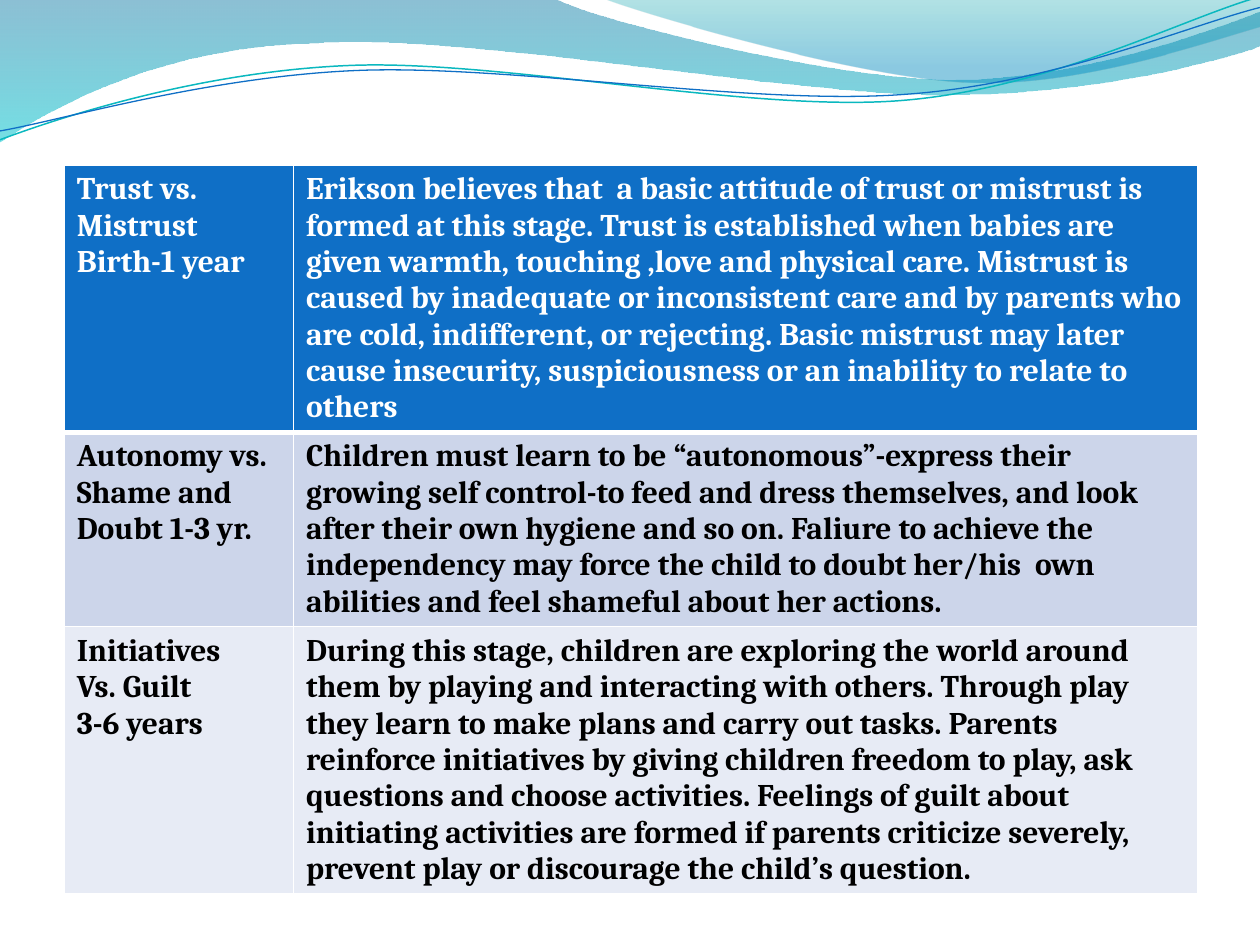
from dataclasses import dataclass
from math import cos, radians, sin

from lxml.etree import SubElement
from pptx import Presentation
from pptx.dml.color import RGBColor
from pptx.oxml.ns import qn
from pptx.util import Inches, Pt


@dataclass(frozen=True)
class Theme:
    font: str = "Cambria"
    body_size: int = 18
    white: str = "FFFFFF"
    black: str = "000000"
    blue: str = "0F6FC6"
    teal: str = "0AB8BF"
    band_dark: str = "CCD5EA"
    band_light: str = "E7EBF5"
    # Gradient stops: colour, opacity in percent
    wide_wave: tuple = (("0074A1", 45), ("00C6CF", 55))
    right_wave: tuple = (("00A1A9", 30), ("008BBF", 45))


THEME = Theme()
LINE_TILT = -2.7

# Outlines in inches: a pair is a straight step, six numbers are a Bezier curve
WIDE_WAVE = [
    (0, 0), (4.4, -0.01), (4.76, 0.17, 6.64, 0.63, 7.58, 0.63),
    (8.53, 0.63, 9.58, 0.26, 10, 0.09), (10.01, 0.36),
    (9.83, 0.44, 8.7, 0.76, 7.46, 0.75), (6.22, 0.75, 3.82, 0.28, 2.57, 0.34),
    (1.29, 0.36, 0.46, 0.83, -0.01, 1.13)]
RIGHT_WAVE = [
    (4.79, -0.01), (5.09, 0.11, 6.82, 0.62, 7.69, 0.65),
    (8.56, 0.69, 9.61, 0.32, 10, 0.21), (10, 0)]
TEAL_LINE = [
    (0, 1.11), (0.48, 0.93, 1.58, 0.57, 2.77, 0.52),
    (3.95, 0.47, 5.93, 0.89, 7.13, 0.8), (8.33, 0.71, 9.38, 0.15, 9.98, -0.02)]
BLUE_LINE = [
    (0, 1.04), (0.47, 0.96, 1.64, 0.61, 2.83, 0.56),
    (4.03, 0.51, 5.97, 0.84, 7.17, 0.75), (8.36, 0.67, 9.41, 0.21, 10, 0.06)]

STAGES = [
    (["Trust vs.", "Mistrust Birth-1 year"],
     ["Erikson believes that  a basic attitude of trust or mistrust is formed at "
      "this stage. Trust is established when babies are given warmth, touching "
      ",love and physical care. Mistrust is caused by inadequate or inconsistent "
      "care and by parents who are cold, indifferent, or rejecting. Basic mistrust "
      "may later cause insecurity, suspiciousness or an inability to relate to "
      "others"]),
    (["Autonomy vs. Shame and Doubt 1-3 yr."],
     ["Children must learn to be “autonomous”-express their growing self "
      "control-to feed and dress themselves, and look after their own hygiene and "
      "so on. Faliure to achieve the independency may force the child to doubt "
      "her/his  own abilities and feel shameful about her actions."]),
    (["Initiatives", "Vs. Guilt", "3-6 years"],
     ["During this stage, children are exploring the world around them by playing "
      "and interacting with others. Through play they learn to make plans and "
      "carry out tasks. Parents reinforce initiatives by giving children freedom "
      "to play, ask questions and choose activities. Feelings of guilt about "
      "initiating activities are formed if parents criticize severely, prevent "
      "play or discourage the child’s question."]),
]


def rgb(code):
    return RGBColor.from_string(code)


def add_outline(shapes, left, top, outline, closed, tilt=0):
    """Draw an outline whose curves stay true Bezier curves."""
    xs, ys = [step[-2] for step in outline], [step[-1] for step in outline]
    mid_x, mid_y = (min(xs) + max(xs)) / 2, (min(ys) + max(ys)) / 2
    turn = radians(-tilt)

    def place(x, y):
        dx, dy = x - mid_x, y - mid_y
        return (left + Inches(mid_x + dx * cos(turn) - dy * sin(turn)),
                top + Inches(mid_y + dx * sin(turn) + dy * cos(turn)))

    steps = [[place(*step[i:i + 2]) for i in range(0, len(step), 2)] for step in outline]
    anchors = [step[-1] for step in steps]
    builder = shapes.build_freeform(*anchors[0])
    builder.add_line_segments(anchors[1:], close=closed)
    shape = builder.convert_to_shape()
    shape.shadow.inherit = False

    # Put the two control points in front of the end point of each curve
    origin_x, origin_y = min(x for x, _ in anchors), min(y for _, y in anchors)
    segments = list(shape.element.spPr.iter(qn("a:lnTo")))
    for segment, step in zip(segments, steps[1:]):
        if len(step) == 3:
            segment.tag = qn("a:cubicBezTo")
            for i, (x, y) in enumerate(step[:2]):
                control = SubElement(segment, qn("a:pt"),
                                     x=str(x - origin_x), y=str(y - origin_y))
                segment.insert(i, control)
    shape.rotation = tilt
    return shape


def add_wave(shapes, left, top, outline, stops, end=1.0):
    wave = add_outline(shapes, left, top, outline, closed=True)
    wave.line.fill.background()
    wave.fill.gradient()
    wave.fill.gradient_angle = 270
    for stop, position, (color, _) in zip(wave.fill.gradient_stops, (0, end), stops):
        stop.position = position
        stop.color.rgb = rgb(color)
    for tint, (_, opacity) in zip(wave.element.spPr.iter(qn("a:srgbClr")), stops):
        SubElement(tint, qn("a:alpha"), val=str(opacity * 1000))


def add_wave_line(shapes, left, top, outline, color, weight):
    curve = add_outline(shapes, left, top, outline, closed=False, tilt=LINE_TILT)
    curve.fill.background()
    curve.line.color.rgb = rgb(color)
    curve.line.width = Pt(weight)


def add_header(slide, left, top):
    add_wave(slide.shapes, left, top, WIDE_WAVE, THEME.wide_wave)
    add_wave(slide.shapes, left, top, RIGHT_WAVE, THEME.right_wave, end=0.8)
    wave_lines = slide.shapes.add_group_shape().shapes
    add_wave_line(wave_lines, left, top, TEAL_LINE, THEME.teal, 0.85)
    add_wave_line(wave_lines, left, top, BLUE_LINE, THEME.blue, 0.75)


def write_text(frame, paragraphs, *, color, size=THEME.body_size, bold=True):
    frame.word_wrap = True
    for i, text in enumerate(paragraphs):
        paragraph = frame.add_paragraph() if i else frame.paragraphs[0]
        run = paragraph.add_run()
        run.text = text
        run.font.name = THEME.font
        run.font.size = Pt(size)
        run.font.bold = bold
        run.font.color.rgb = rgb(color)


def set_borders(cell, **weights):
    """Draw white borders; they have to precede the fill in the cell's XML."""
    properties = cell._tc.get_or_add_tcPr()
    for side in ("L", "R", "T", "B"):
        border = SubElement(properties, qn(f"a:ln{side}"),
                            w=str(Pt(weights.get(side, 1))))
        fill = SubElement(border, qn("a:solidFill"))
        SubElement(fill, qn("a:srgbClr"), val=THEME.white)


def add_stage_table(slide, left, top, width, height):
    table_frame = slide.shapes.add_table(len(STAGES), 2, left, top, width, height)
    table = table_frame.table
    name_width = Inches(1.82)
    table.columns[0].width = name_width
    table.columns[1].width = width - name_width
    # Least row heights; rows grow with their text
    row_heights = (1.25, 1.25, 1.72)
    row_styles = ((THEME.blue, THEME.white, {"B": 3}),
                  (THEME.band_dark, THEME.black, {"T": 3}),
                  (THEME.band_light, THEME.black, {}))
    for r, (stage, row_height, style) in enumerate(zip(STAGES, row_heights, row_styles)):
        table.rows[r].height = Inches(row_height)
        background, text_color, borders = style
        for c, paragraphs in enumerate(stage):
            cell = table.cell(r, c)
            set_borders(cell, **borders)
            cell.fill.solid()
            cell.fill.fore_color.rgb = rgb(background)
            write_text(cell.text_frame, paragraphs, color=text_color)
    table_frame.height = height


def main():
    deck = Presentation()
    deck.slide_width, deck.slide_height = Inches(10), Inches(7.5)
    slide = deck.slides.add_slide(deck.slide_layouts[6])
    slide.background.fill.solid()
    slide.background.fill.fore_color.rgb = rgb(THEME.white)

    # Wave header
    add_header(slide, Inches(0), Inches(0))
    # Table of developmental stages
    add_stage_table(slide, Inches(0.51), Inches(1.31), Inches(9), Inches(6))

    deck.save("out.pptx")


if __name__ == "__main__":
    main()
